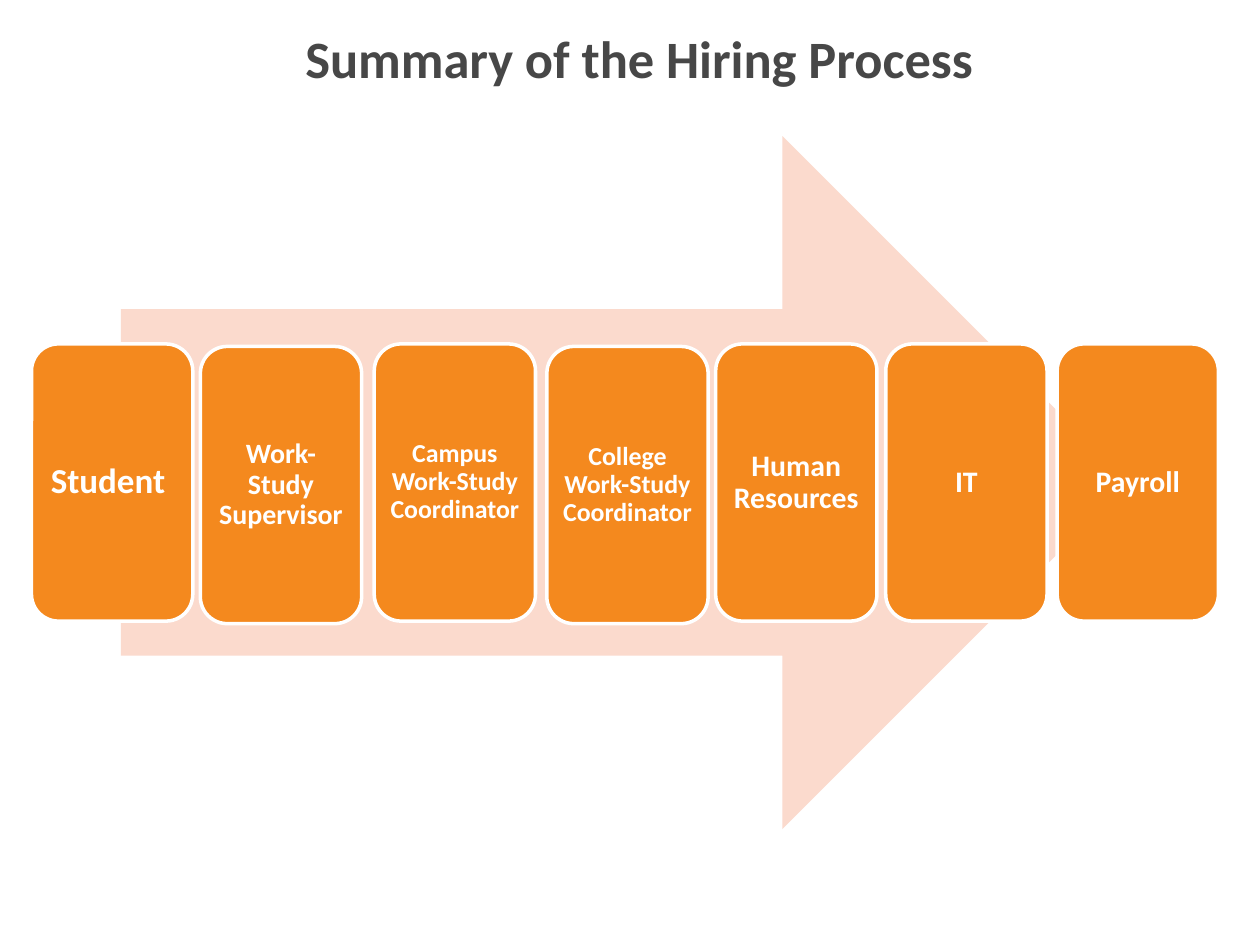
from dataclasses import dataclass

from pptx import Presentation
from pptx import util as u
from pptx.dml.color import RGBColor
from pptx.enum import shapes, text


@dataclass(frozen=True)
class Theme:
    font: str = "Calibri"
    title_color: RGBColor = RGBColor(0x47, 0x47, 0x47)
    arrow_color: RGBColor = RGBColor(0xFB, 0xDA, 0xCD)
    step_color: RGBColor = RGBColor(0xF4, 0x89, 0x1E)
    white: RGBColor = RGBColor(0xFF, 0xFF, 0xFF)
    title_size: float = 30
    first_size: float = 20
    short_size: float = 17
    medium_size: float = 16
    long_size: float = 14.8


THEME = Theme()
STEP_WIDTH, STEP_HEIGHT = 1.28, 2.2

# Label, left, top, type size, inset
STEPS = [
    ("Student ", 0.25, 2.73, THEME.first_size, 0.08),
    ("Work-Study Supervisor", 1.59, 2.75, THEME.medium_size, 0.07),
    ("Campus Work-Study Coordinator", 2.97, 2.73, THEME.long_size, 0.06),
    ("College Work-Study Coordinator", 4.34, 2.75, THEME.long_size, 0.06),
    ("Human Resources", 5.68, 2.73, THEME.short_size, 0.07),
    ("IT", 7.03, 2.73, THEME.short_size, 0.07),
    ("Payroll", 8.39, 2.73, THEME.short_size, 0.07),
]


def write_text(box, words, size, color):
    frame = box.text_frame
    frame.word_wrap = True
    frame.vertical_anchor = text.MSO_ANCHOR.MIDDLE
    frame.text = words
    para = frame.paragraphs[0]
    para.alignment = text.PP_ALIGN.CENTER
    for span in para.runs:
        span.font.name = THEME.font
        span.font.size = u.Pt(size)
        span.font.bold = True
        span.font.color.rgb = color
    return frame


def add_title(page, words):
    box = page.shapes.add_textbox(
        u.Inches(0.48), u.Inches(0.08), u.Inches(9.19), u.Inches(0.75))
    write_text(box, words, THEME.title_size, THEME.title_color)


def add_filled_shape(page, kind, left, top, width, height, color):
    shape = page.shapes.add_shape(
        kind, u.Inches(left), u.Inches(top), u.Inches(width), u.Inches(height))
    shape.shadow.inherit = False
    shape.fill.solid()
    shape.fill.fore_color.rgb = color
    shape.line.fill.background()
    return shape


def add_step(page, label, left, top, size, inset):
    step = add_filled_shape(page, shapes.MSO_SHAPE.ROUNDED_RECTANGLE,
                            left, top, STEP_WIDTH, STEP_HEIGHT, THEME.step_color)
    step.line.color.rgb = THEME.white
    step.line.width = u.Pt(2)
    frame = write_text(step, label, size, THEME.white)
    frame.margin_left = frame.margin_right = u.Inches(inset)
    frame.margin_top = frame.margin_bottom = u.Inches(inset)
    frame.paragraphs[0].line_spacing = 0.9


def main():
    deck = Presentation()
    deck.slide_width, deck.slide_height = u.Inches(10), u.Inches(7.5)
    page = deck.slides.add_slide(deck.slide_layouts[6])

    # Heading
    add_title(page, "Summary of the Hiring Process")

    # Arrow behind the steps
    add_filled_shape(page, shapes.MSO_SHAPE.RIGHT_ARROW,
                     0.96, 1.08, 8, 5.5, THEME.arrow_color)

    # Hiring steps
    for step in STEPS:
        add_step(page, *step)

    deck.save("out.pptx")


if __name__ == "__main__":
    main()
